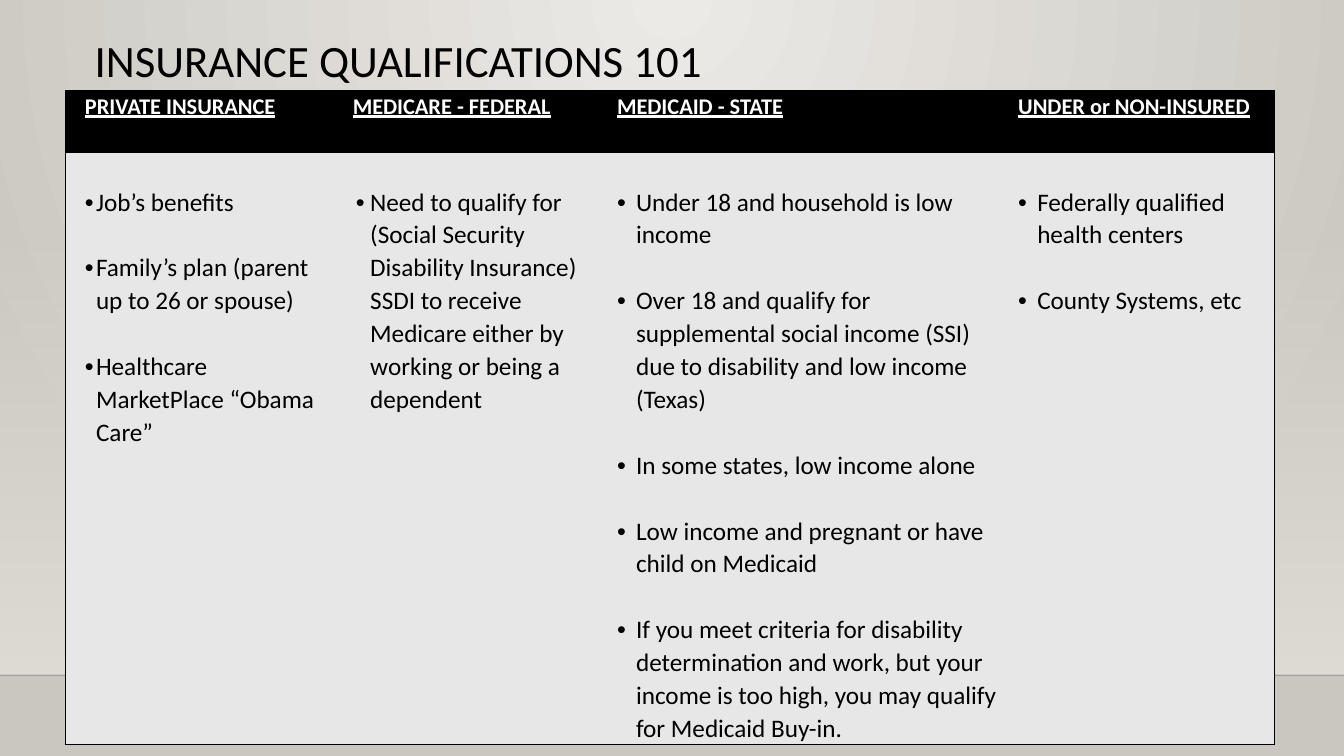
"""Build a slide comparing four kinds of health insurance qualification."""
from lxml import etree
from pptx import Presentation
from pptx import util as u
from pptx.dml import color
from pptx.enum import shapes, text
from pptx.oxml import parse_xml
from pptx.oxml.ns import nsdecls, qn

NO_STYLE = "{2D5ABB26-0587-4C30-8999-92F81FD0307C}"
FORMATS = {
    "title": {"size": u.Pt(32), "bold": False, "underline": False},
    "header": {"size": u.Pt(16), "bold": True, "underline": True},
    "body": {"size": u.Pt(18), "bold": False, "underline": False},
}
COLUMNS = [
    {"width": 6.91, "header": "PRIVATE INSURANCE", "header_indent": 0.36, "indent": (0.64, -0.28),
     "items": ["Job’s benefits",
               "Family’s plan (parent up to 26 or spouse)",
               "Healthcare MarketPlace “Obama Care”"]},
    {"width": 6.86, "header": "MEDICARE - FEDERAL", "header_indent": 0.2, "indent": (0.64, -0.36),
     "items": ["Need to qualify for (Social Security Disability Insurance) SSDI to receive "
               "Medicare either by working or being a dependent"]},
    {"width": 10.11, "header": "MEDICAID - STATE", "header_indent": 0, "indent": (0.48, -0.48),
     "items": ["Under 18 and household is low income",
               "Over 18 and qualify for supplemental social income (SSI) due to disability "
               "and low income (Texas)",
               "In some states, low income alone",
               "Low income and pregnant or have child on Medicaid",
               "If you meet criteria for disability determination and work, but your income "
               "is too high, you may qualify for Medicaid Buy-in."]},
    {"width": 6.59, "header": "UNDER or NON-INSURED", "header_indent": 0, "indent": (0.48, -0.48),
     "items": ["Federally qualified health centers", "County Systems, etc"]},
]


def rgb(value):
    return color.RGBColor.from_string(value)


def apply(target, values):
    for name, value in values.items():
        setattr(target, name, value)


def fade(shape, percent):
    first_color = shape.element.find(".//" + qn("a:srgbClr"))
    etree.SubElement(first_color, qn("a:alpha"), val=str(percent * 1000))


class InsuranceSlide:
    font = "Calibri"
    black, white, cell_gray = "000000", "FFFFFF", "E7E7E7"

    def __init__(self, deck):
        self.slide = deck.slides.add_slide(deck.slide_layouts[5])
        self.shapes = self.slide.shapes

    def gradient(self, fill, colors):
        fill.gradient()
        for stop, value in zip(fill.gradient_stops, colors):
            stop.color.rgb = rgb(value)

    def background(self, center, edge):
        self.gradient(self.slide.background.fill, (center, edge))
        linear = self.slide.element.find(".//" + qn("a:lin"))
        linear.getparent().replace(linear, parse_xml(
            f'<a:path {nsdecls("a")} path="circle">'
            '<a:fillToRect l="43000" t="0" r="43000" b="100000"/></a:path>'))

    def wall(self, left, top, width, height, value):
        wall = self.shapes.add_shape(
            shapes.MSO_SHAPE.RECTANGLE, *map(u.Cm, (left, top, width, height)))
        wall.shadow.inherit = False
        wall.line.fill.background()
        self.gradient(wall.fill, (value, value))
        wall.fill.gradient_angle = 270
        fade(wall, 0)

    def floor_line(self, y, width, value):
        line = self.shapes.add_connector(
            shapes.MSO_CONNECTOR.STRAIGHT, 0, u.Cm(y), u.Cm(width), u.Cm(y))
        line.line.color.rgb = rgb(value)
        line.line.width = u.Pt(1)
        fade(line, 20)
        etree.SubElement(line.element.spPr, qn("a:effectLst"))

    def add_words(self, paragraph, words, role, value):
        run = paragraph.add_run()
        run.text = words
        apply(run.font, {"name": self.font, **FORMATS[role]})
        run.font.color.rgb = rgb(value)

    def title(self, words, left, top, width, height):
        title = self.shapes.title
        apply(title, {"left": u.Cm(left), "top": u.Cm(top),
                      "width": u.Cm(width), "height": u.Cm(height)})
        apply(title.text_frame, {"word_wrap": True, "auto_size": text.MSO_AUTO_SIZE.NONE,
                                 "vertical_anchor": text.MSO_ANCHOR.TOP})
        paragraph = title.text_frame.paragraphs[0]
        apply(paragraph, {"alignment": text.PP_ALIGN.LEFT, "line_spacing": 0.9})
        self.add_words(paragraph, words, "title", self.black)

    def cell(self, cell, fill, sides, margin_top):
        apply(cell, {"margin_left": u.Cm(0.13), "margin_right": u.Cm(0.13),
                     "margin_top": u.Cm(margin_top), "margin_bottom": 0,
                     "vertical_anchor": text.MSO_ANCHOR.TOP})
        properties = cell._tc.get_or_add_tcPr()
        for side in sides:
            properties.append(parse_xml(
                f'<a:ln{side} {nsdecls("a")} w="12700"><a:solidFill>'
                f'<a:srgbClr val="{self.black}"/></a:solidFill></a:ln{side}>'))
        cell.fill.solid()
        cell.fill.fore_color.rgb = rgb(fill)

    def paragraphs(self, cell, lines, role, value, indent, bullet=False):
        frame = cell.text_frame
        for index, words in enumerate(lines):
            paragraph = frame.add_paragraph() if index else frame.paragraphs[0]
            properties = paragraph._p.get_or_add_pPr()
            for name, length in zip(("marL", "indent"), indent):
                properties.set(name, str(int(u.Cm(length))))
            if bullet:
                etree.SubElement(properties, qn("a:buFont"), typeface="Arial")
                etree.SubElement(properties, qn("a:buChar"), char="•")
            paragraph.line_spacing = 1.07
            if index:
                paragraph.space_before = u.Pt(23.5)
            self.add_words(paragraph, words, role, value)

    def table(self, columns, left, top, row_heights):
        width = sum(column["width"] for column in columns)
        frame = self.shapes.add_table(
            len(row_heights), len(columns),
            *map(u.Cm, (left, top, width, sum(row_heights))))
        table = frame.table
        apply(table, {"first_row": False, "horz_banding": False})
        table._tbl.tblPr.find(qn("a:tableStyleId")).text = NO_STYLE
        for row, height in zip(table.rows, row_heights):
            row.height = u.Cm(height)
        for index, column in enumerate(columns):
            table.columns[index].width = u.Cm(column["width"])
            sides = ["L"] * (index == 0) + ["R"] * (index == len(columns) - 1) + ["T", "B"]
            header, body = table.cell(0, index), table.cell(1, index)
            self.cell(header, self.black, sides, 0)
            self.cell(body, self.cell_gray, sides, 0.83)
            self.paragraphs(header, [column["header"]], "header", self.white,
                            (column["header_indent"], 0))
            self.paragraphs(body, column["items"], "body", self.black,
                            column["indent"], bullet=True)


def main():
    deck = Presentation()
    apply(deck, {"slide_width": u.Cm(33.87), "slide_height": u.Cm(19.05)})
    page = InsuranceSlide(deck)
    page.background("ECEAE7", "CAC7C1")
    page.wall(0, 5.61, 33.87, 11.4, "DFDBD5")
    page.floor_line(17.02, 33.87, "000001")
    page.title("INSURANCE QUALIFICATIONS 101", 2.13, 0.86, 28.75, 3.68)
    page.table(COLUMNS, 1.65, 2.29, (1.54, 14.88))
    deck.save("out.pptx")


if __name__ == "__main__":
    main()
